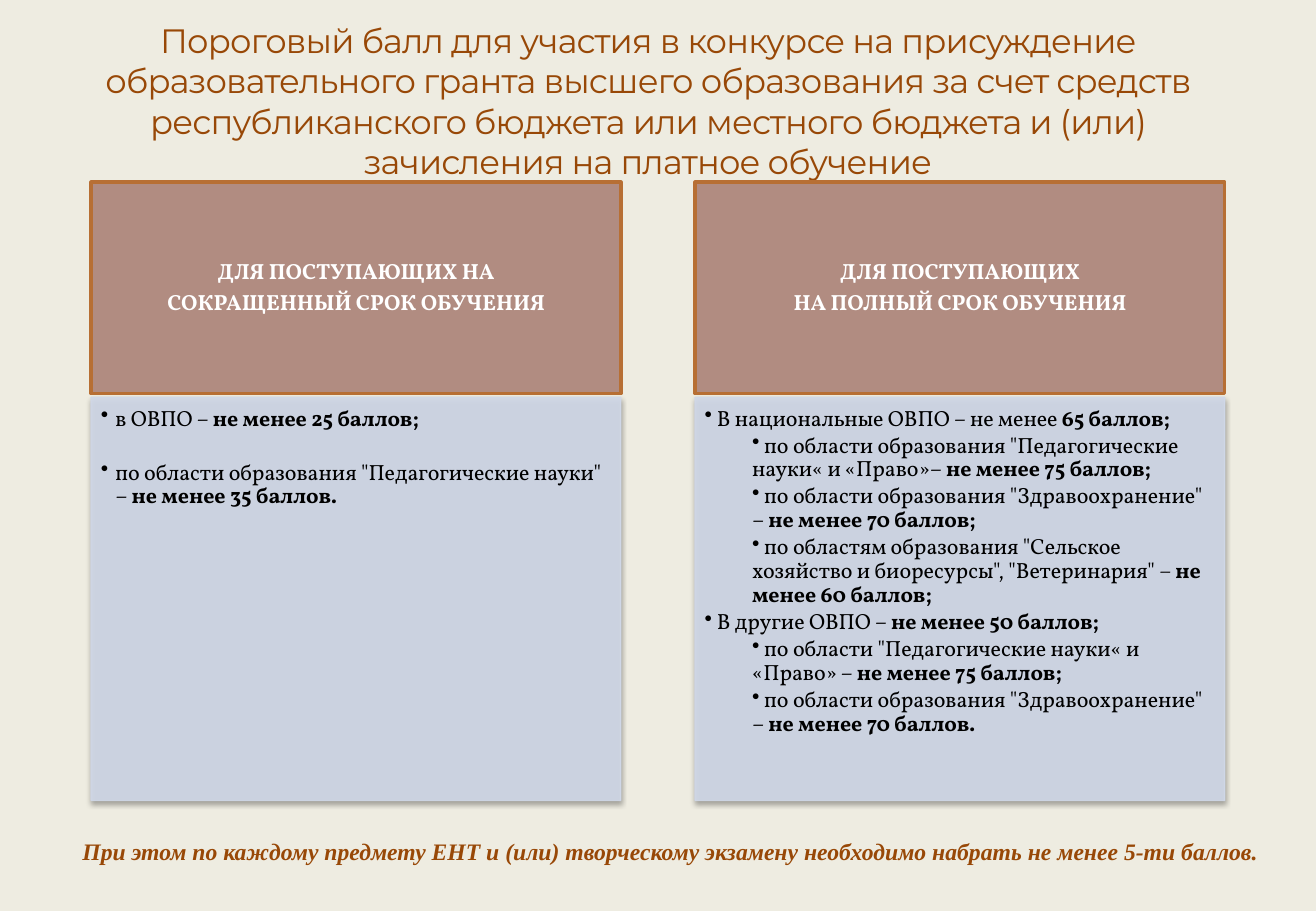
import pptx
import pptx.util
import pptx.dml.color
import pptx.enum.shapes
import pptx.enum.text
import pptx.oxml
import pptx.oxml.ns

Inches = pptx.util.Inches
Pt = pptx.util.Pt
ALIGN = pptx.enum.text.PP_ALIGN
ANCHOR = pptx.enum.text.MSO_ANCHOR
NAMESPACE = pptx.oxml.ns.nsdecls("a")

WIDTH, HEIGHT = 10.83, 7.5
BROWN, CLAY, RUST, BLUE = "984807", "B18C81", "B76F34", "D0D8E8"

# Two equal columns: left edge, width and the step between them
COLUMN_LEFT, COLUMN_WIDTH, COLUMN_STEP = 0.75, 4.36, 4.97
COLUMN_TOP, COLUMN_HEIGHT = 1.5, 5.09
HEADING_SHARE, BODY_SHARE = 0.342, 0.652

# Bullet styles: left margin and first-line indent
WIDE, TIGHT, NESTED = (0.12, -0.12), (0.1, -0.1), (0.39, 0)

# Each item: style, plain text, bold text, space after in points
SHORT_COURSE = [
    (WIDE, "в ОВПО – ", "не менее 25 баллов;", 18),
    (WIDE, 'по области образования "Педагогические науки" – ', "не менее 35 баллов.", 2),
]
FULL_COURSE = [
    (TIGHT, "В национальные ОВПО – не менее ", "65 баллов;", 2),
    (NESTED, ' по области образования "Педагогические науки« и «Право»– ',
     "не менее 75 баллов;", 2),
    (NESTED, ' по области образования "Здравоохранение" – ', "не менее 70 баллов;", 2),
    (NESTED, ' по областям образования "Сельское хозяйство и биоресурсы", "Ветеринария" − ',
     "не менее 60 баллов;", 2),
    (TIGHT, "В другие ОВПО – ", "не менее 50 баллов;", 2),
    (NESTED, ' по области "Педагогические науки« и «Право» – ', "не менее 75 баллов;", 2),
    (NESTED, ' по области образования "Здравоохранение" – ', "не менее 70 баллов.", 2),
]
COLUMNS = [
    (["ДЛЯ ПОСТУПАЮЩИХ НА", "СОКРАЩЕННЫЙ СРОК ОБУЧЕНИЯ"], SHORT_COURSE),
    (["ДЛЯ ПОСТУПАЮЩИХ", "НА ПОЛНЫЙ СРОК ОБУЧЕНИЯ"], FULL_COURSE),
]


def set_color(color_format, value):
    color_format.rgb = pptx.dml.color.RGBColor.from_string(value)


def add_run(paragraph, text, size, font, color, bold=False, italic=False):
    run = paragraph.add_run()
    run.text = text
    run.font.size = Pt(size)
    run.font.name = font
    run.font.bold = bold
    run.font.italic = italic
    set_color(run.font.color, color)
    return run


def set_frame(frame, insets, anchor=ANCHOR.TOP):
    frame.word_wrap = True
    frame.auto_size = pptx.enum.text.MSO_AUTO_SIZE.NONE
    frame.vertical_anchor = anchor
    frame.margin_left, frame.margin_top, frame.margin_right, frame.margin_bottom = map(
        Inches, insets)


def next_paragraph(frame, index):
    return frame.add_paragraph() if index else frame.paragraphs[0]


def add_panel(slide, box, fill, line, line_width):
    shape = slide.shapes.add_shape(
        pptx.enum.shapes.MSO_SHAPE.RECTANGLE, *map(Inches, box))
    shape.shadow.inherit = False
    shape.fill.solid()
    set_color(shape.fill.fore_color, fill)
    set_color(shape.line.color, line)
    shape.line.width = Pt(line_width)
    return shape


def soften(shape):
    """Make fill and line slightly transparent and add a soft shadow."""
    properties = shape.element.spPr
    for color in properties.iter(pptx.oxml.ns.qn("a:srgbClr")):
        color.append(pptx.oxml.parse_xml(f'<a:alpha {NAMESPACE} val="90000"/>'))
    properties.find(pptx.oxml.ns.qn("a:effectLst")).append(pptx.oxml.parse_xml(
        f'<a:outerShdw {NAMESPACE} blurRad="{Pt(3.1)}" dist="{Pt(1.8)}" dir="5400000" '
        'rotWithShape="0"><a:srgbClr val="000000"><a:alpha val="35000"/></a:srgbClr>'
        '</a:outerShdw>'))


def set_bullet(paragraph, margin, indent):
    properties = paragraph._p.get_or_add_pPr()
    properties.set("marL", str(Inches(margin)))
    properties.set("indent", str(Inches(indent)))
    properties.append(pptx.oxml.parse_xml(f'<a:buChar {NAMESPACE} char="•"/>'))


def add_title(slide, box, text):
    title = slide.shapes.title
    title.left, title.top, title.width, title.height = map(Inches, box)
    set_frame(title.text_frame, (0, 0, 0, 0))
    paragraph = title.text_frame.paragraphs[0]
    paragraph.alignment = ALIGN.CENTER
    run = add_run(paragraph, text, 20, "Montserrat", BROWN)
    run.font._element.set("spc", "-50")


def add_column(slide, box, heading, items):
    left, top, width, height = box

    # Heading panel
    panel = add_panel(slide, (left, top, width, height * HEADING_SHARE), CLAY, RUST, 2)
    set_frame(panel.text_frame, (0.1, 0.06, 0.1, 0.06), ANCHOR.MIDDLE)
    for index, text in enumerate(heading):
        paragraph = next_paragraph(panel.text_frame, index)
        paragraph.alignment = ALIGN.CENTER
        paragraph.line_spacing = 0.9
        paragraph.space_after = Pt(4.5)
        add_run(paragraph, text, 13, "Vollkorn", "FFFFFF", bold=True)

    # Bulleted panel, aligned with the bottom of the column
    body_height = height * BODY_SHARE
    body = add_panel(
        slide, (left, top + height - body_height, width, body_height), BLUE, BLUE, 0.75)
    soften(body)
    set_frame(body.text_frame, (0.08, 0.08, 0.1, 0.11))
    for index, (style, plain, bold, space_after) in enumerate(items):
        paragraph = next_paragraph(body.text_frame, index)
        paragraph.alignment = ALIGN.LEFT
        paragraph.line_spacing = 0.9
        paragraph.space_after = Pt(space_after)
        set_bullet(paragraph, *style)
        add_run(paragraph, plain, 13, "Vollkorn", "000000")
        add_run(paragraph, bold, 13, "Vollkorn", "000000", bold=True)


def add_footnote(slide, box, text):
    note = slide.shapes.add_textbox(*map(Inches, box))
    set_frame(note.text_frame, (0.1, 0.05, 0.1, 0.05))
    add_run(note.text_frame.paragraphs[0], text, 14, "Times New Roman", BROWN,
            bold=True, italic=True)


def main():
    presentation = pptx.Presentation()
    presentation.slide_width = Inches(WIDTH)
    presentation.slide_height = Inches(HEIGHT)
    slide = presentation.slides.add_slide(presentation.slide_layouts[5])
    slide.background.fill.solid()
    set_color(slide.background.fill.fore_color, "EEECE1")

    add_title(slide, (0.58, 0.16, 9.5, 1.35),
              "Пороговый балл для участия в конкурсе на присуждение образовательного "
              "гранта высшего образования за счет средств республиканского бюджета или "
              "местного бюджета и (или) зачисления на платное обучение")
    for index, (heading, items) in enumerate(COLUMNS):
        left = COLUMN_LEFT + index * COLUMN_STEP
        add_column(slide, (left, COLUMN_TOP, COLUMN_WIDTH, COLUMN_HEIGHT), heading, items)
    add_footnote(slide, (0.58, 6.84, 10, 0.34),
                 "При этом по каждому предмету ЕНТ и (или) творческому экзамену "
                 "необходимо набрать не менее 5-ти баллов.")
    presentation.save("out.pptx")


if __name__ == "__main__":
    main()
